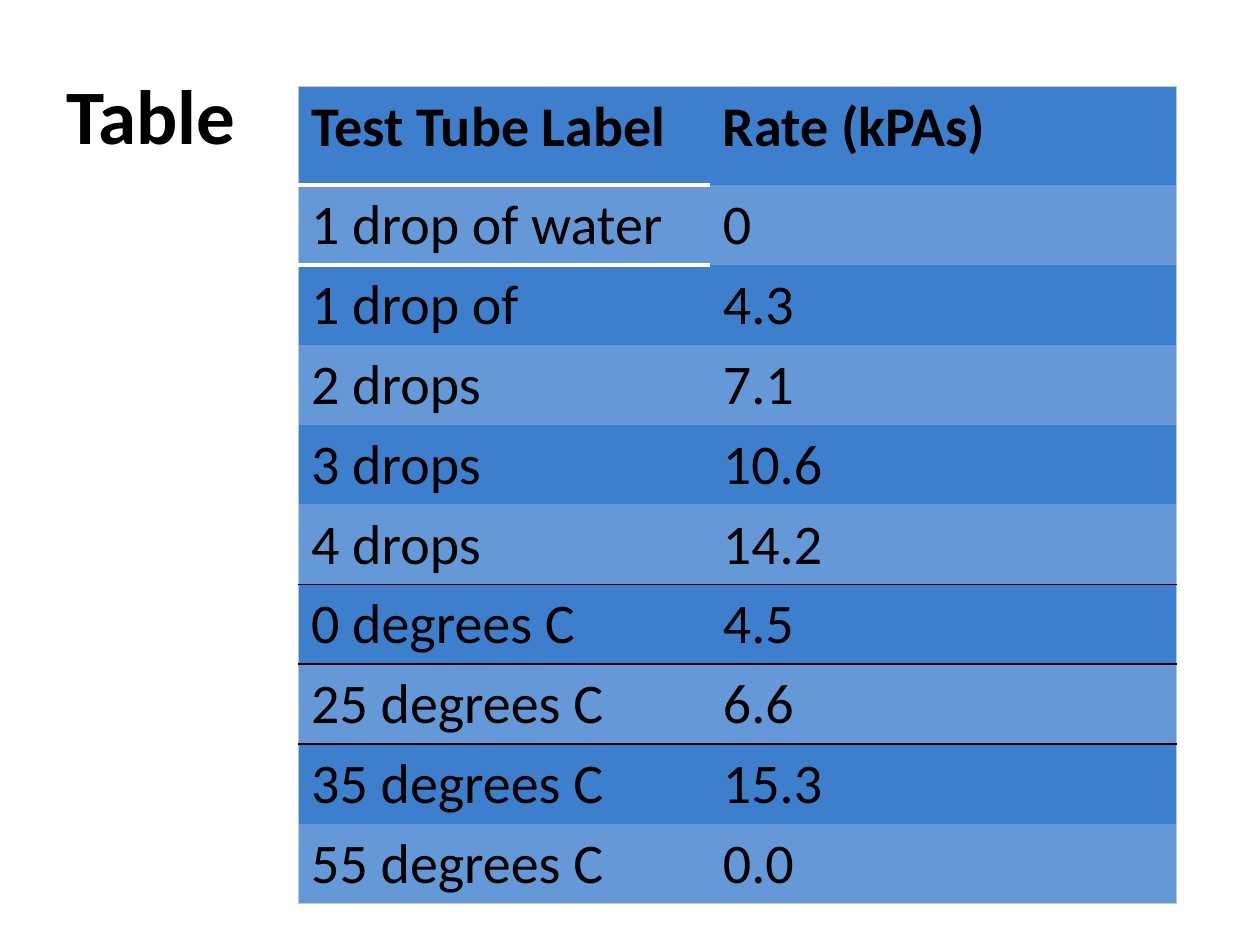
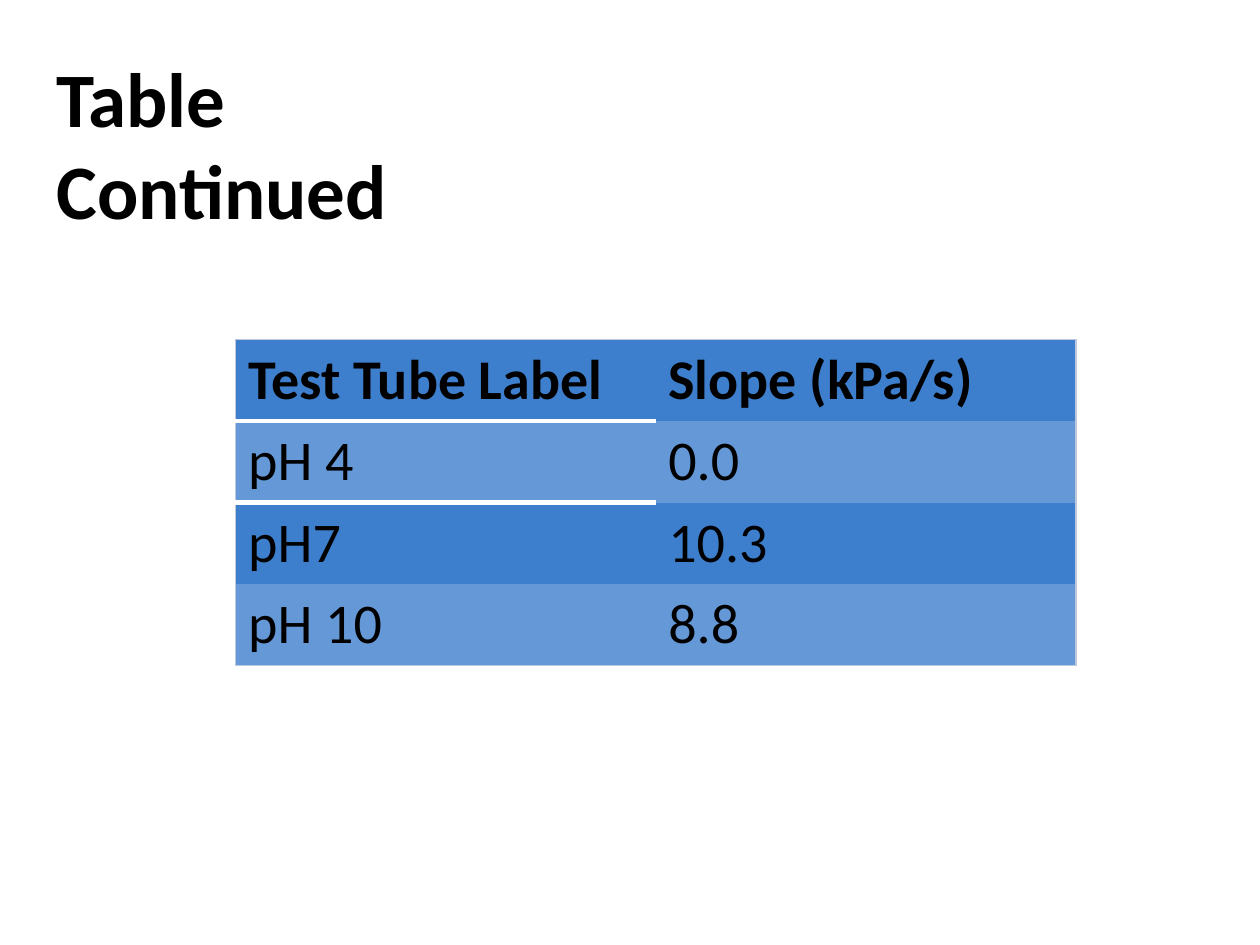
from lxml.etree import SubElement
from pptx import Presentation
from pptx.dml.color import RGBColor
from pptx.oxml.ns import qn
from pptx.util import Cm, Pt

BLACK = RGBColor(0x00, 0x00, 0x00)
WHITE = RGBColor(0xFF, 0xFF, 0xFF)
DARK_BLUE = RGBColor(0x3D, 0x7F, 0xCD)
LIGHT_BLUE = RGBColor(0x64, 0x98, 0xD6)
EDGE = RGBColor(0xBD, 0xC8, 0xDD)
FONT = "Calibri"
NO_STYLE = "{2D5ABB26-0587-4C30-8999-92F81FD0307C}"

# Places are (left, top, width, height) in cm. Rules are body-row numbers
# that have a black line below them.
TABLE_SLIDES = [
    {
        "title": "Table",
        "title_place": (1.09, 1.24, 22.63, 2.14),
        "table_place": (6.02, 1.75),
        "columns": (8.3, 9.4),
        "header_height": 1.98,
        "row_height": 1.61,
        "rules": (5, 6),
        "rows": [
            ("Test Tube Label", "Rate (kPAs)"),
            ("1 drop of water", "0"),
            ("1 drop of", "4.3"),
            ("2 drops", "7.1"),
            ("3 drops", "10.6"),
            ("4 drops", "14.2"),
            ("0 degrees C", "4.5"),
            ("25 degrees C", "6.6"),
            ("35 degrees C", "15.3"),
            ("55 degrees C", "0.0"),
        ],
    },
    {
        "title": "Table Continued",
        "title_place": (0.89, 0.89, 9.47, 4.01),
        "table_place": (4.75, 6.85),
        "columns": (8.47, 8.47),
        "header_height": 1.64,
        "row_height": 1.64,
        "rules": (),
        "rows": [
            ("Test Tube Label", "Slope (kPa/s)"),
            ("pH 4", "0.0"),
            ("pH7", "10.3"),
            ("pH 10", "8.8"),
        ],
    },
]


def write_text(text_frame, text, size=32, bold=False, color=BLACK):
    text_frame.word_wrap = True
    run = text_frame.paragraphs[0].add_run()
    run.text = text
    run.font.name = FONT
    run.font.size = Pt(size)
    run.font.bold = bold
    run.font.color.rgb = color


def add_borders(cell, borders):
    """Draw {side: (color, points)}; call before the cell gets its fill."""
    properties = cell._tc.get_or_add_tcPr()
    for side in "LRTB":
        if side in borders:
            color, points = borders[side]
            line = SubElement(properties, qn(f"a:ln{side}"), w=str(Pt(points)))
            fill = SubElement(line, qn("a:solidFill"))
            SubElement(fill, qn("a:srgbClr"), val=str(color))


presentation = Presentation()
presentation.slide_width = Cm(25.4)
presentation.slide_height = Cm(19.05)

for content in TABLE_SLIDES:
    slide = presentation.slides.add_slide(presentation.slide_layouts[6])
    title = slide.shapes.add_textbox(*[Cm(length) for length in content["title_place"]])
    write_text(title.text_frame, content["title"], size=44, bold=True)

    rows = content["rows"]
    columns = content["columns"]
    last_row, last_column = len(rows) - 1, len(columns) - 1
    left, top = content["table_place"]
    height = content["header_height"] + last_row * content["row_height"]
    frame = slide.shapes.add_table(
        len(rows), len(columns), Cm(left), Cm(top), Cm(sum(columns)), Cm(height)
    )
    table = frame.table
    table._tbl.tblPr.find(qn("a:tableStyleId")).text = NO_STYLE
    for column, width in zip(table.columns, columns):
        column.width = Cm(width)

    for row_number, values in enumerate(rows):
        is_header = row_number == 0
        table.rows[row_number].height = Cm(
            content["header_height"] if is_header else content["row_height"]
        )
        for column_number, value in enumerate(values):
            cell = table.cell(row_number, column_number)
            borders = {}
            if column_number == 0:
                borders["L"] = (EDGE, 0.75)
            if column_number == last_column:
                borders["R"] = (EDGE, 0.75)
            if is_header:
                borders["T"] = (EDGE, 0.75)
            if row_number == last_row:
                borders["B"] = (EDGE, 0.75)
            if column_number == 0 and row_number < 2:
                borders["B" if is_header else "T"] = (WHITE, 3)
            if row_number in content["rules"]:
                borders["B"] = (BLACK, 1)
            if row_number - 1 in content["rules"]:
                borders["T"] = (BLACK, 1)
            add_borders(cell, borders)
            cell.fill.solid()
            cell.fill.fore_color.rgb = LIGHT_BLUE if row_number % 2 else DARK_BLUE
            write_text(cell.text_frame, value, bold=is_header)

presentation.save("out.pptx")
